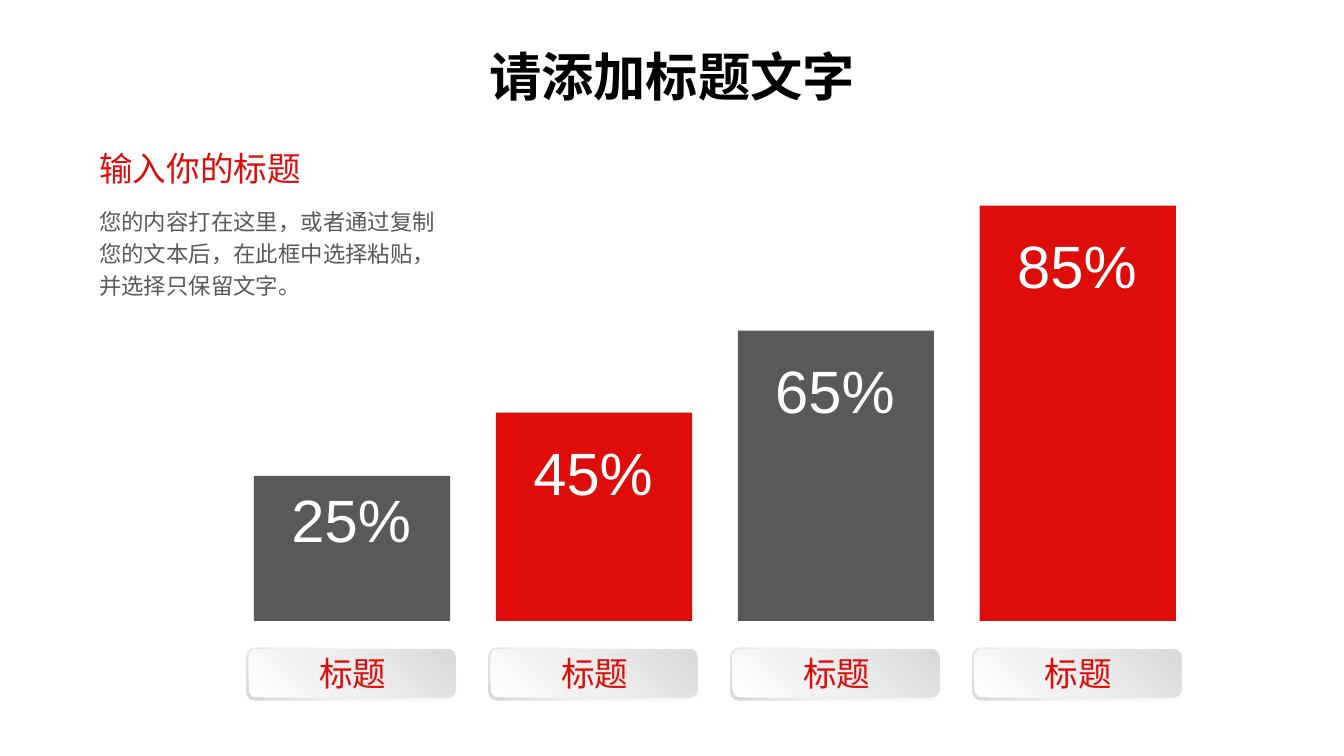
import copy
from dataclasses import dataclass

import pptx
import pptx.dml.color
import pptx.enum.shapes
import pptx.enum.text
import pptx.oxml
import pptx.oxml.ns
import pptx.util

Inches = pptx.util.Inches
Shapes = pptx.enum.shapes.MSO_SHAPE
Align = pptx.enum.text.PP_ALIGN
qn = pptx.oxml.ns.qn


@dataclass(frozen=True)
class Theme:
    red: str = "DE0D09"
    grey: str = "595959"
    white: str = "FFFFFF"
    black: str = "000000"
    latin: str = "Arial"
    chinese: str = "Noto Sans CJK SC"
    title: int = 28
    percent: int = 32
    heading: int = 18
    body: int = 12


THEME = Theme()
SLIDE_WIDTH = 10
SLIDE_HEIGHT = SLIDE_WIDTH * 9 / 16

# Column grid: centre of the first column, step to the next, shared baseline
FIRST_CENTRE, COLUMN_STEP = 2.62, 1.8
BASELINE, BAR_WIDTH = 4.62, 1.46
INTRO_LEFT = 0.64

# Percentage, bar height, colour, gap between bar top and percentage box
COLUMNS = [
    ("25%", 1.08, THEME.grey, 0),
    ("45%", 1.55, THEME.red, 0.12),
    ("65%", 2.16, THEME.grey, 0.12),
    ("85%", 3.09, THEME.red, 0.12),
]

# Top, width, height, counter-clockwise angle, gradient stops
PLATE_LAYERS = [
    (4.82, 1.57, 0.39, 225, [(0, "FFFFFF"), (0.62, "F2F2F2"), (1, "D9D9D9")]),
    (4.83, 1.54, 0.36, 45, [(0, "FFFFFF"), (0.42, "F0F0F0"), (1, "D9D9D9")]),
]


def rgb(value):
    return pptx.dml.color.RGBColor.from_string(value)


def add_block(shapes, kind, left, top, width, height):
    block = shapes.add_shape(kind, *map(Inches, (left, top, width, height)))
    block.shadow.inherit = False
    block.line.fill.background()
    return block


def add_text(slide, box, text, size, color, align=Align.LEFT, wrap=False,
             latin=THEME.latin, bold=False, line_spacing=None):
    frame = slide.shapes.add_textbox(*map(Inches, box)).text_frame
    frame.word_wrap = wrap
    frame.auto_size = pptx.enum.text.MSO_AUTO_SIZE.SHAPE_TO_FIT_TEXT
    paragraph = frame.paragraphs[0]
    paragraph.text = text
    paragraph.alignment = align
    if line_spacing:
        paragraph.line_spacing = line_spacing
    font = paragraph.font
    font.name, font.size, font.bold = latin, pptx.util.Pt(size), bold
    font.color.rgb = rgb(color)
    east_asian = pptx.oxml.parse_xml(
        '<a:ea xmlns:a="http://schemas.openxmlformats.org/drawingml/2006/main"'
        f' typeface="{THEME.chinese}"/>')
    next(paragraph._p.iter(qn("a:latin"))).addnext(east_asian)
    return frame


def fill_gradient(block, angle, stops):
    block.fill.gradient()
    block.fill.gradient_angle = angle
    stop_list = next(block._element.iter(qn("a:gsLst")))
    while len(stop_list) < len(stops):
        stop_list.append(copy.deepcopy(stop_list[0]))
    for stop, (position, color) in zip(block.fill.gradient_stops, stops):
        stop.position = position
        stop.color.rgb = rgb(color)


def add_plate(slide, centre):
    """Two rounded layers with opposing gradients, grouped as a raised plate."""
    plate = slide.shapes.add_group_shape()
    for top, width, height, angle, stops in PLATE_LAYERS:
        layer = add_block(plate.shapes, Shapes.ROUNDED_RECTANGLE,
                          centre - width / 2, top, width, height)
        fill_gradient(layer, angle, stops)


def add_column(slide, centre, percent, height, color, gap):
    top = BASELINE - height
    add_plate(slide, centre)
    bar = add_block(slide.shapes, Shapes.RECTANGLE,
                    centre - BAR_WIDTH / 2, top, BAR_WIDTH, height)
    bar.fill.solid()
    bar.fill.fore_color.rgb = rgb(color)
    add_text(slide, (centre - 0.55, top + gap, 1.1, 0.64), percent,
             THEME.percent, THEME.white)
    add_text(slide, (centre - 0.35, 4.81, 0.71, 0.4), "标题",
             THEME.heading, THEME.red, Align.CENTER)


def add_title(slide):
    width = 3.47
    frame = add_text(slide, ((SLIDE_WIDTH - width) / 2, 0.13, width, 0.87),
                     "请添加标题文字", THEME.title, THEME.black, Align.CENTER,
                     wrap=True, latin=THEME.chinese, bold=True)
    frame.auto_size = pptx.enum.text.MSO_AUTO_SIZE.NONE
    frame.vertical_anchor = pptx.enum.text.MSO_ANCHOR.MIDDLE
    frame.margin_left = frame.margin_right = Inches(0.07)
    frame.margin_top = frame.margin_bottom = Inches(0.04)


def add_intro(slide):
    add_text(slide, (INTRO_LEFT, 1.05, 1.72, 0.4), "输入你的标题",
             THEME.heading, THEME.red)
    add_text(slide, (INTRO_LEFT, 1.46, 2.81, 0.81),
             "您的内容打在这里，或者通过复制您的文本后，在此框中选择粘贴，并选择只保留文字。",
             THEME.body, THEME.grey, wrap=True, line_spacing=1.2)


def main():
    deck = pptx.Presentation()
    deck.slide_width = Inches(SLIDE_WIDTH)
    deck.slide_height = Inches(SLIDE_HEIGHT)
    slide = deck.slides.add_slide(deck.slide_layouts[6])
    add_title(slide)
    add_intro(slide)
    for index, column in enumerate(COLUMNS):
        add_column(slide, FIRST_CENTRE + index * COLUMN_STEP, *column)
    deck.save("out.pptx")


if __name__ == "__main__":
    main()
